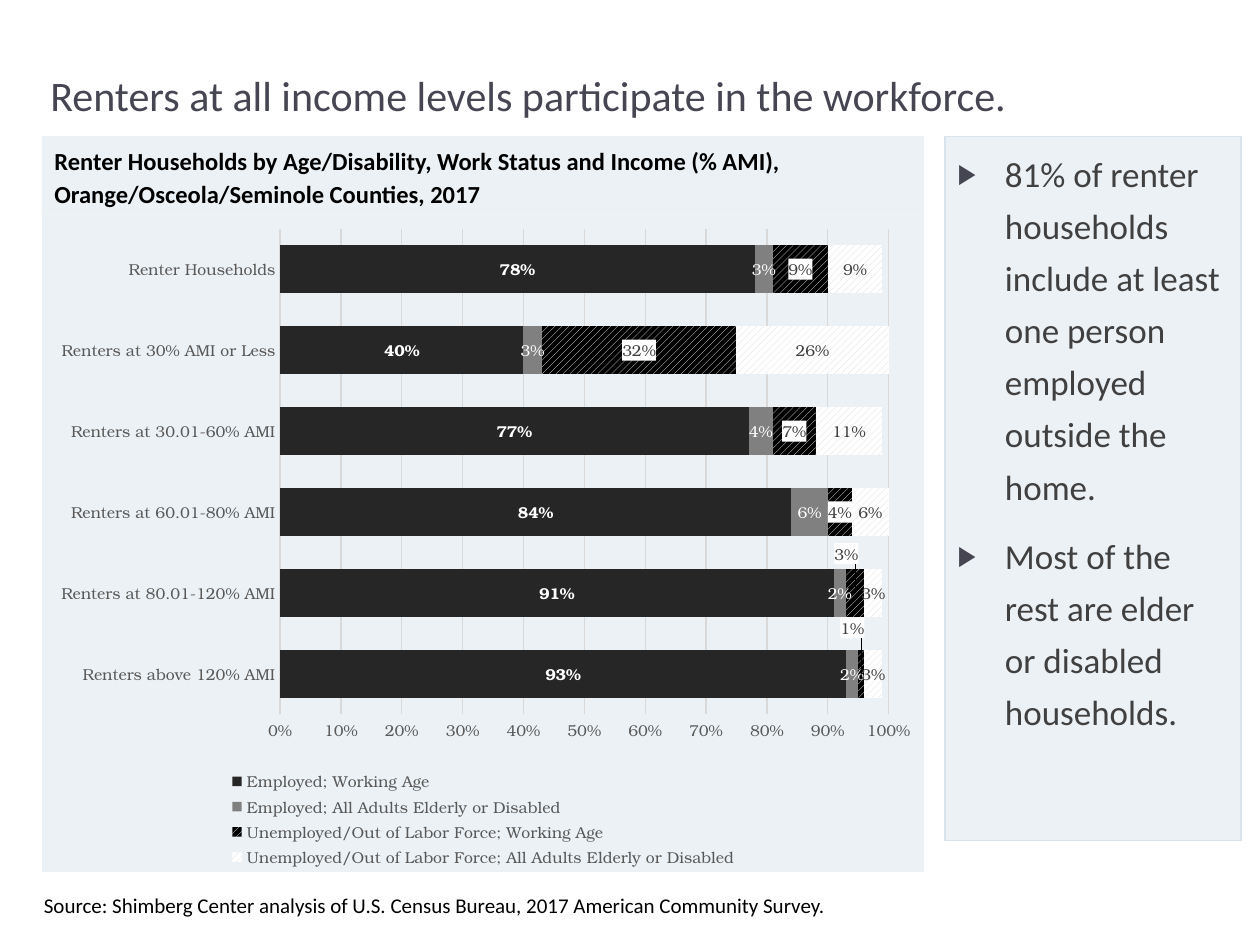
from copy import deepcopy
from lxml import etree
from pptx import Presentation
from pptx import util as u
from pptx.chart.data import CategoryChartData
from pptx.dml.color import RGBColor
from pptx.enum import chart as ch, dml, shapes, text
from pptx.oxml import parse_xml
from pptx.oxml.ns import nsdecls, qn

Pt = u.Pt
HUE = {"panel": "ECF1F5", "edge": "D9E3EB", "title": "464653", "body": "404040",
       "black": "000000", "white": "FFFFFF", "axis": "595959", "grid": "D9D9D9",
       "dark": "262626", "gray": "808080"}
SERIF = "TeX Gyre Bonum"
rgb = {name: RGBColor.from_string(code) for name, code in HUE.items()}


def style(frame, lines, size, hue, bold=False, gap=1, before=0, after=0, anchor="TOP"):
    frame.word_wrap = True
    frame.auto_size = text.MSO_AUTO_SIZE.NONE
    frame.vertical_anchor = text.MSO_ANCHOR[anchor]
    for i, line in enumerate(lines):
        para = frame.paragraphs[0] if i == 0 else frame.add_paragraph()
        para.alignment = text.PP_ALIGN.LEFT
        para.line_spacing = gap
        para.space_before, para.space_after = Pt(before), Pt(after)
        run = para.add_run()
        run.text = line
        font = run.font
        font.name, font.size, font.bold = "Calibri", Pt(size), bold
        font.color.rgb = rgb[hue]


def layout(x, y, w=None, h=None, inner=False):
    parts = '<c:layoutTarget val="inner"/>' if inner else ""
    if w:
        parts += '<c:xMode val="edge"/><c:yMode val="edge"/>'
    sizes = (("x", x), ("y", y), ("w", w), ("h", h))
    parts += "".join(f'<c:{k} val="{v}"/>' for k, v in sizes if v is not None)
    return parse_xml(f'<c:layout {nsdecls("c")}><c:manualLayout>{parts}</c:manualLayout></c:layout>')


deck = Presentation()
deck.slide_width, deck.slide_height = Pt(720), Pt(540)
slide = deck.slides.add_slide(deck.slide_layouts[1])

title, body = slide.placeholders
title.left, title.top, title.width, title.height = Pt(21.6), Pt(23.8), Pt(672.5), Pt(48.2)
style(title.text_frame, ["Renters at all income levels participate in the workforce."],
      24, "title", anchor="BOTTOM")

head = slide.shapes.add_shape(shapes.MSO_SHAPE.RECTANGLE, Pt(24), Pt(77.8), Pt(504), Pt(45.4))
head.shadow.inherit = False
head.fill.solid()
head.fill.fore_color.rgb = rgb["panel"]
head.line.fill.background()
style(head.text_frame, ["Renter Households by Age/Disability, Work Status and Income (% AMI), "
                        "Orange/Osceola/Seminole Counties, 2017"],
      14, "black", bold=True, gap=1.12, before=10, after=10)

note = slide.shapes.add_textbox(Pt(18), Pt(506.2), Pt(690), Pt(21.6))
style(note.text_frame, ["Source: Shimberg Center analysis of U.S. Census Bureau, "
                        "2017 American Community Survey."], 12, "black")

body.left, body.top, body.width, body.height = Pt(540), Pt(77.8), Pt(169.2), Pt(402.5)
body.fill.solid()
body.fill.fore_color.rgb = rgb["panel"]
body.line.color.rgb = rgb["edge"]
body.line.width = Pt(0.75)
style(body.text_frame, ["81% of renter households include at least one person employed outside the home.",
                        "Most of the rest are elder or disabled households."],
      20, "body", gap=1.24, before=10)
for para in body.text_frame.paragraphs:
    props = para._p.get_or_add_pPr()
    props.set("marL", str(Pt(27)))
    props.set("indent", str(Pt(-27)))
    tint = etree.SubElement(props, qn("a:buClr"))
    etree.SubElement(tint, qn("a:srgbClr"), val=HUE["title"])
    etree.SubElement(props, qn("a:buSzPct"), val="80000")
    etree.SubElement(props, qn("a:buFont"), typeface="Arial")
    etree.SubElement(props, qn("a:buChar"), char="▶")

data = CategoryChartData(number_format="0%")
data.categories = ["Renters above 120% AMI", "Renters at 80.01-120% AMI", "Renters at 60.01-80% AMI",
                   "Renters at 30.01-60% AMI", "Renters at 30% AMI or Less", "Renter Households"]
data.add_series("Employed; Working Age", [0.93, 0.91, 0.84, 0.77, 0.4, 0.78])
data.add_series("Employed; All Adults Elderly or Disabled", [0.02, 0.02, 0.06, 0.04, 0.03, 0.03])
data.add_series("Unemployed/Out of Labor Force; Working Age", [0.01, 0.03, 0.04, 0.07, 0.32, 0.09])
data.add_series("Unemployed/Out of Labor Force; All Adults Elderly or Disabled",
                [0.03, 0.03, 0.06, 0.11, 0.26, 0.09])
chart = slide.shapes.add_chart(ch.XL_CHART_TYPE.BAR_STACKED, Pt(24), Pt(123.2),
                               Pt(504), Pt(375), data).chart
chart.has_title = False
chart.font.name, chart.font.size = SERIF, Pt(10)
chart.font.color.rgb = rgb["black"]
space = chart._chartSpace
space.find(qn("c:chart")).addnext(parse_xml(
    f'<c:spPr {nsdecls("c", "a")}><a:solidFill><a:srgbClr val="{HUE["panel"]}"/></a:solidFill>'
    '<a:ln><a:noFill/></a:ln></c:spPr>'))

cats, vals = chart.category_axis, chart.value_axis
chart.has_legend = True
legend = chart.legend
legend.position = ch.XL_LEGEND_POSITION.BOTTOM
legend.include_in_layout = False
for part in (cats.tick_labels, vals.tick_labels, legend):
    part.font.name, part.font.size = SERIF, Pt(9)
    part.font.color.rgb = rgb["axis"]
for axis in (cats, vals):
    axis.major_tick_mark = axis.minor_tick_mark = ch.XL_TICK_MARK.NONE
vals.minimum_scale, vals.maximum_scale, vals.major_unit = 0, 1, 0.1
vals.tick_labels.number_format = "0%"
vals.tick_labels.number_format_is_linked = False
vals.format.line.fill.background()
vals.has_major_gridlines = True
cats.has_major_gridlines = False
for line in (cats.format.line, vals.major_gridlines.format.line):
    line.color.rgb = rgb["grid"]
    line.width = Pt(0.75)

area = space.find(".//" + qn("c:plotArea"))
for owner, spot, frame in ((area, 0, layout(0.27, 0.02, 0.69, 0.74, inner=True)),
                           (legend._element, 1, layout(0.21, 0.84, 0.58, 0.16))):
    for old in owner.findall(qn("c:layout")):
        owner.remove(old)
    owner.insert(spot, frame)

plot = chart.plots[0]
plot.gap_width, plot.overlap = 69, 100
plot.vary_by_categories = False
looks = [("dark", None, "white", True), ("gray", None, "white", False),
         ("white", "black", "body", False), ("grid", "white", "body", False)]
for series, (fore, back, ink, bold) in zip(plot.series, looks):
    fill = series.format.fill
    if back:
        fill.patterned()
        fill.pattern = dml.MSO_PATTERN.WIDE_UPWARD_DIAGONAL
        fill.back_color.rgb = rgb[back]
    else:
        fill.solid()
    fill.fore_color.rgb = rgb[fore]
    tags = series.data_labels
    tags.show_value = True
    tags.number_format, tags.number_format_is_linked = "0%", False
    tags.position = ch.XL_LABEL_POSITION.CENTER
    tags.font.name, tags.font.size, tags.font.bold = SERIF, Pt(9), bold
    tags.font.color.rgb = rgb[ink]

tags = plot.series[2].data_labels._element
tags.find(qn("c:numFmt")).addnext(parse_xml(
    f'<c:spPr {nsdecls("c", "a")}><a:solidFill><a:srgbClr val="{HUE["white"]}"/></a:solidFill></c:spPr>'))
base = [deepcopy(part) for part in tags if part.tag != qn("c:showLeaderLines")]
for i, lift in enumerate((-0.07, -0.06)):
    tag = parse_xml(f'<c:dLbl {nsdecls("c")}><c:idx val="{i}"/></c:dLbl>')
    tag.append(layout(-0.01, lift))
    tag.extend(deepcopy(base))
    tags.insert(i, tag)

deck.save("out.pptx")
